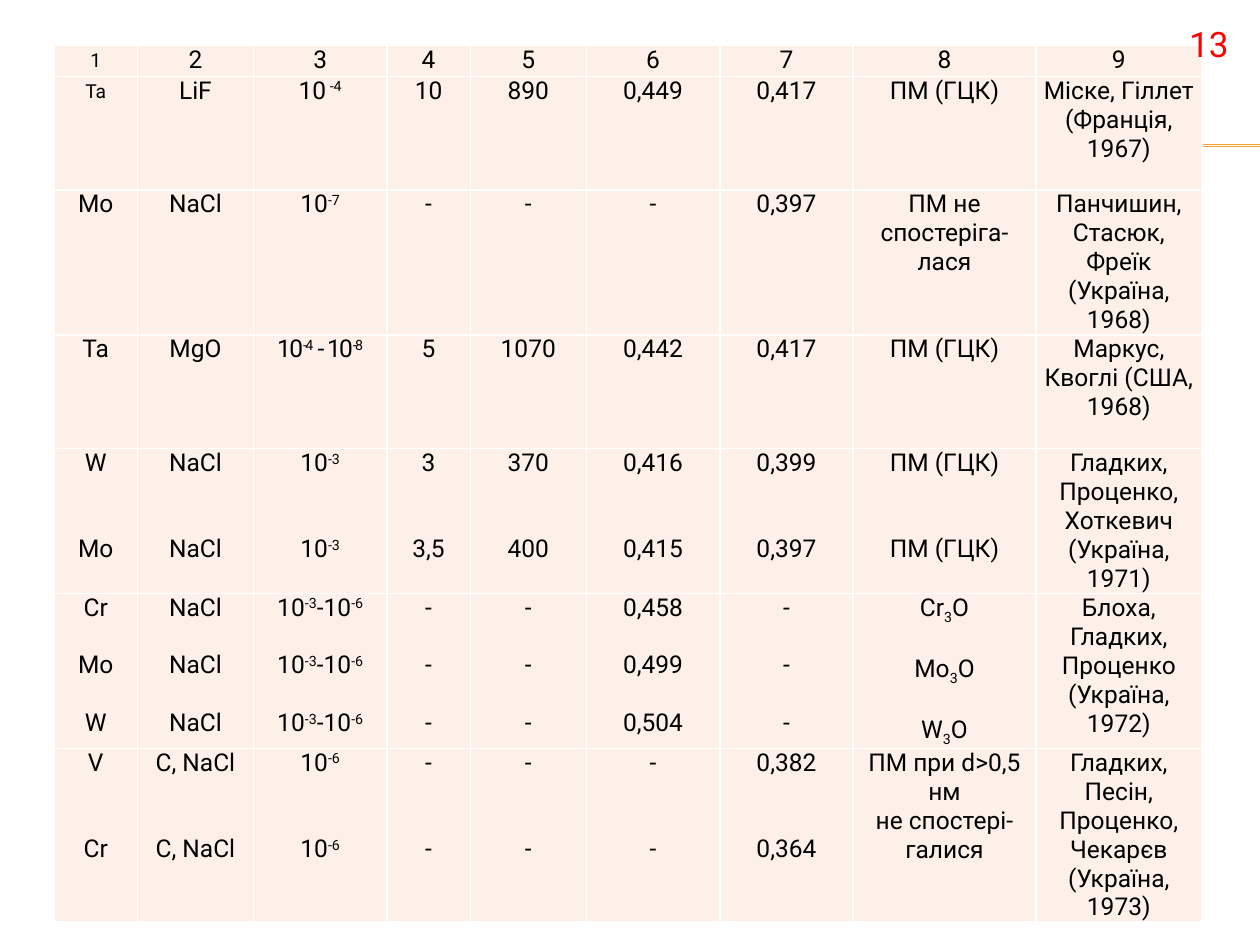
from lxml import etree
from pptx import Presentation
from pptx.dml.color import RGBColor
from pptx.enum.shapes import MSO_CONNECTOR
from pptx.enum.text import PP_ALIGN
from pptx.oxml.ns import qn
from pptx.util import Cm, Pt

STRAIGHT = MSO_CONNECTOR.STRAIGHT
CENTER, RIGHT = PP_ALIGN.CENTER, PP_ALIGN.RIGHT
BLACK = RGBColor(0x00, 0x00, 0x00)
WHITE = RGBColor(0xFF, 0xFF, 0xFF)
RED = RGBColor(0xFF, 0x00, 0x00)
GOLD = RGBColor(0xF0, 0xA2, 0x2E)
CREAM = RGBColor(0xFC, 0xF0, 0xE8)
FONT = "Roboto"
LINE_PT = 16.4
SUPER, SUB = "30000", "-25000"

COL_WIDTHS = [1.68, 2.34, 2.69, 1.68, 2.34, 2.69, 2.69, 3.68, 3.35]

# Cell markup: ^superscript^, _subscript_, "|" starts a spaced paragraph.
ROWS = [
    (0.62, 0, ["1", "2", "3", "4", "5", "6", "7", "8", "9"]),
    (2.29, 0, ["Ta", "LіF", "10^ -4^", "10", "890", "0,449", "0,417",
               "ПМ (ГЦК)", "Міске, Гіллет\n(Франція, 1967)"]),
    (2.87, 0, ["Mo", "NaCl", "10^-7^", "-", "-", "-", "0,397",
               "ПМ не\nспостеріга- лася",
               "Панчишин, Стасюк, Фреїк (Україна, 1968)"]),
    (2.29, 0, ["Ta", "MgO", "10^-4^ - 10^-8^", "5", "1070", "0,442", "0,417",
               "ПМ (ГЦК)", "Маркус, Квоглі (США, 1968)"]),
    (2.87, 2, ["W|Mo", "NaCl|NaCl", "10^-3^|10^-3^", "3|3,5", "370|400",
               "0,416|0,415", "0,399|0,397", "ПМ (ГЦК)|ПМ (ГЦК)",
               "Гладких,\nПроценко, Хоткевич (Україна, 1971)"]),
    (2.87, 1, ["Cr|Mo|W", "NaCl|NaCl|NaCl",
               "10^-3^-10^-6^|10^-3^-10^-6^|10^-3^-10^-6^", "-|-|-", "-|-|-",
               "0,458|0,499|0,504", "-|-|-", "Cr_3_O|Mo_3_O|W_3_O",
               "Блоха, Гладких, Проценко (Україна, 1972)"]),
    (3.43, 2, ["V|Cr", "C, NaCl|C, NaCl", "10^-6^|10^-6^", "-|-", "-|-",
               "-|-", "0,382|0,364", "ПМ при d>0,5 нм\nне спостері-галися",
               "Гладких, Песін, Проценко, Чекарєв (Україна, 1973)"]),
]


def style_run(r, size, color):
    r.font.name = FONT
    r.font.size = Pt(size)
    r.font.color.rgb = color


def split_markup(text):
    for i, part in enumerate(text.split("^")):
        for j, piece in enumerate(part.split("_")):
            if piece:
                yield piece, SUPER if i % 2 else SUB if j % 2 else None


def write_paragraph(p, text, size, tight):
    p.alignment = CENTER
    for piece, baseline in split_markup(text):
        r = p.add_run()
        r.text = piece
        style_run(r, size, BLACK)
        props = r._r.get_or_add_rPr()
        if baseline:
            props.set("baseline", baseline)
        if tight:
            props.set("spc", "-100")


def add_borders(cell):
    props = cell._tc.get_or_add_tcPr()
    for side in ("a:lnL", "a:lnR", "a:lnT", "a:lnB"):
        ln = etree.SubElement(props, qn(side), w=str(Pt(1)))
        fill = etree.SubElement(ln, qn("a:solidFill"))
        etree.SubElement(fill, qn("a:srgbClr"), val=str(WHITE))


def fill_cell(cell, text, gap, small):
    add_borders(cell)
    cell.fill.solid()
    cell.fill.fore_color.rgb = CREAM
    cell.margin_left = cell.margin_right = Cm(0.15)
    cell.margin_top = cell.margin_bottom = 0
    tf = cell.text_frame
    for i, line in enumerate(text.replace("|", "\n|").split("\n")):
        p = tf.add_paragraph() if i else tf.paragraphs[0]
        if line.startswith("|"):
            p.space_before = Pt(gap * LINE_PT)
        if small:
            p.line_spacing = Pt(15)
        write_paragraph(p, line.lstrip("|"), 11 if small else 14, " - " in text)


def add_data_table(s):
    height = sum(row[0] for row in ROWS)
    table = s.shapes.add_table(len(ROWS), len(COL_WIDTHS), Cm(1.09), Cm(0.92),
                               Cm(sum(COL_WIDTHS)), Cm(height)).table
    table.first_row = table.horz_banding = False
    for col, width in zip(table.columns, COL_WIDTHS):
        col.width = Cm(width)
    for i, (row_height, gap, texts) in enumerate(ROWS):
        table.rows[i].height = Cm(row_height)
        for j, text in enumerate(texts):
            fill_cell(table.cell(i, j), text, gap, small=j == 0 and i < 2)


def add_rule(s, y):
    line = s.shapes.add_connector(STRAIGHT, Cm(1.42), Cm(y), Cm(25.4), Cm(y))
    line.line.color.rgb = GOLD
    line.line.width = Pt(0.75)
    etree.SubElement(line._element.spPr, qn("a:effectLst"))


def add_page_number(s, text):
    tf = s.shapes.add_textbox(Cm(22.91), Cm(0.33), Cm(2.11), Cm(0.69)).text_frame
    tf.word_wrap = True
    tf.text = text
    p = tf.paragraphs[0]
    p.alignment = RIGHT
    style_run(p.runs[0], 20, RED)


def main():
    prs = Presentation()
    prs.slide_width, prs.slide_height = Cm(25.4), Cm(19.05)
    s = prs.slides.add_slide(prs.slide_layouts[6])
    for y in (2.92, 2.95):
        add_rule(s, y)
    add_data_table(s)
    add_page_number(s, "13")
    prs.save("out.pptx")


if __name__ == "__main__":
    main()
